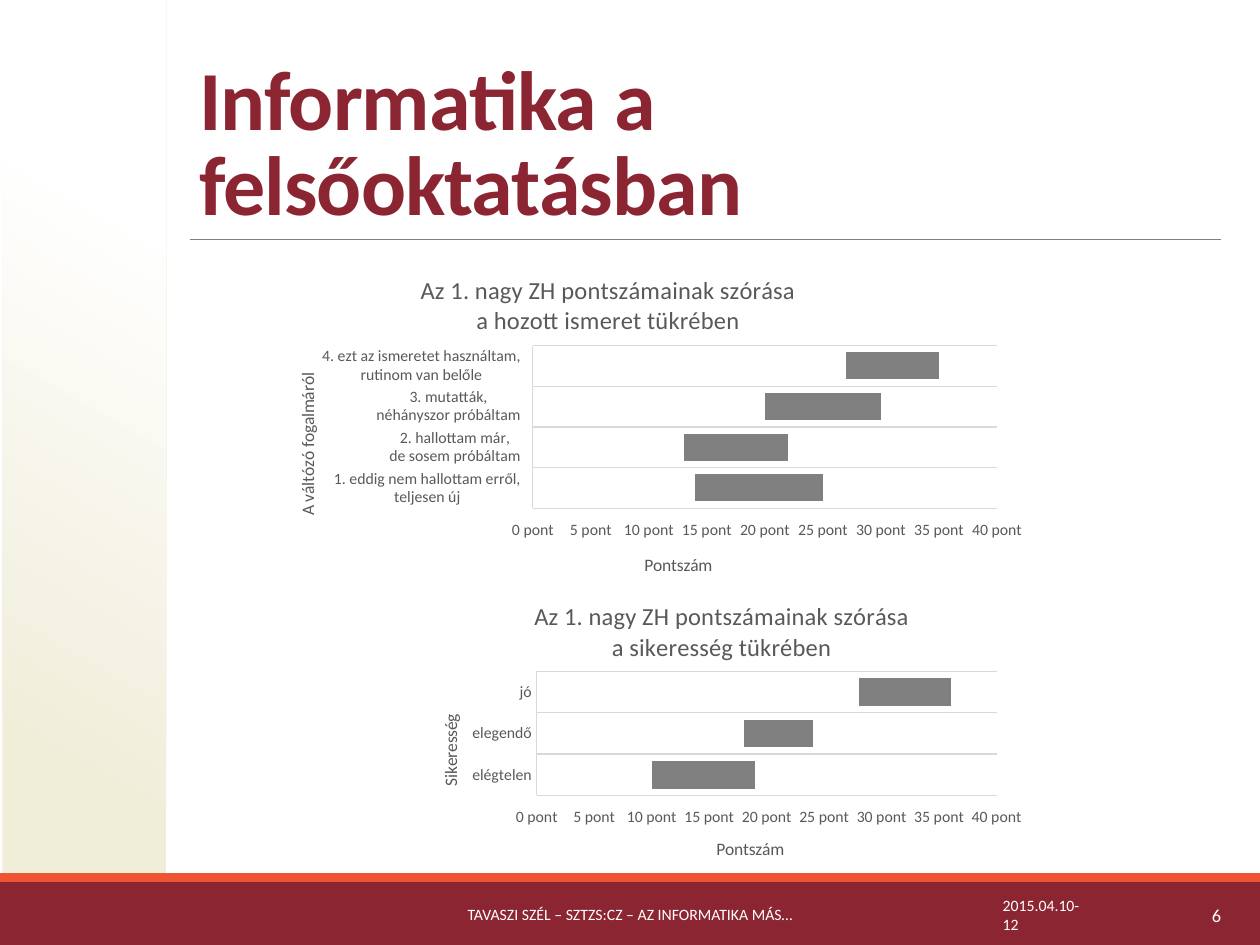
"""Slide with two floating-bar charts of test scores."""
from lxml import etree
from pptx import Presentation, chart as _chart
from pptx import util as u
from pptx.chart import data
from pptx.dml import color
from pptx.enum import chart as charts, shapes, text
from pptx.oxml import ns

RED, ORANGE, CREAM, WHITE = "8C2532", "EE5533", "F0EDD9", "FFFFFF"
GREY, TEXT_GREY, GRID_GREY = "808080", "595959", "D9D9D9"


def rgb(value):
    """Turn a hex string into a colour."""
    return color.RGBColor.from_string(value)


class ScoreSlide:
    """Hold the style and the current slide, on a grid of 100 columns by 75 rows."""

    font = "Calibri"

    def __init__(self, presentation):
        """Add a slide that has a title placeholder."""
        self.column = presentation.slide_width / 100
        self.row = presentation.slide_height / 75
        self.slide = presentation.slides.add_slide(presentation.slide_layouts[5])

    def place(self, left, top, width, height):
        """Convert grid columns and rows into lengths."""
        return (u.Emu(round(left * self.column)), u.Emu(round(top * self.row)),
                u.Emu(round(width * self.column)), u.Emu(round(height * self.row)))

    def style(self, font, size, fill, bold=False):
        """Set name, size, colour and weight of a font."""
        font.name, font.size, font.bold = self.font, u.Pt(size), bold
        font.color.rgb = rgb(fill)

    def rectangle(self, box, fill):
        """Add a rectangle without outline."""
        shape = self.slide.shapes.add_shape(shapes.MSO_SHAPE.RECTANGLE, *self.place(*box))
        shape.shadow.inherit = False
        shape.line.fill.background()
        shape.fill.solid()
        shape.fill.fore_color.rgb = rgb(fill)
        return shape

    def gradient(self, box, stops, angle):
        """Add a rectangle with a linear gradient."""
        fill = self.rectangle(box, WHITE).fill
        fill.gradient()
        fill.gradient_angle = angle
        for stop, (position, value) in zip(fill.gradient_stops, stops):
            stop.position = position
            stop.color.rgb = rgb(value)

    def rule(self, left, right, top):
        """Add a thin horizontal line."""
        start, height, end, _ = self.place(left, top, right, 0)
        line = self.slide.shapes.add_connector(
            shapes.MSO_CONNECTOR.STRAIGHT, start, height, end, height)
        line.line.color.rgb = rgb(GREY)
        line.line.width = u.Pt(0.5)
        etree.SubElement(line._element.spPr, ns.qn("a:effectLst"))

    def title(self, box, words):
        """Move and format the title placeholder."""
        shape = self.slide.shapes.title
        shape.left, shape.top, shape.width, shape.height = self.place(*box)
        frame = shape.text_frame
        frame.text = words
        frame.word_wrap = True
        frame.auto_size = text.MSO_AUTO_SIZE.NONE
        frame.vertical_anchor = text.MSO_ANCHOR.BOTTOM
        frame.margin_right = u.Inches(0.2)
        paragraph = frame.paragraphs[0]
        paragraph.alignment = text.PP_ALIGN.LEFT
        paragraph.line_spacing = 0.85
        run = paragraph.runs[0]
        self.style(run.font, 48, RED, bold=True)
        run.font._element.set("spc", "-50")

    def footer(self, box, words, size, alignment):
        """Add white text to the bottom band."""
        frame = self.slide.shapes.add_textbox(*self.place(*box)).text_frame
        frame.word_wrap = True
        frame.vertical_anchor = text.MSO_ANCHOR.MIDDLE
        frame.text = words
        frame.paragraphs[0].alignment = alignment
        self.style(frame.paragraphs[0].runs[0].font, size, WHITE)

    def layout(self, **shares):
        """Build a manual chart layout from shares of the chart's size."""
        layout = etree.Element(ns.qn("c:layout"))
        manual = etree.SubElement(layout, ns.qn("c:manualLayout"))
        if "w" in shares:
            etree.SubElement(manual, ns.qn("c:layoutTarget"), val="inner")
        for key in ("x", "y"):
            etree.SubElement(manual, ns.qn(f"c:{key}Mode"), val="edge")
        for key, share in shares.items():
            etree.SubElement(manual, ns.qn(f"c:{key}"), val=str(share))
        return layout

    def caption(self, title, words, size, corner, rotation=0):
        """Write, format and place a chart or axis title."""
        frame = title.text_frame
        frame.text = words
        for paragraph in frame.paragraphs:
            self.style(paragraph.font, size, TEXT_GREY)
            self.style(paragraph.runs[0].font, size, TEXT_GREY)
        element = title._element
        element.find(".//" + ns.qn("a:bodyPr")).set("rot", str(rotation * 60000))
        for old in element.findall(ns.qn("c:layout")):
            element.remove(old)
        left, top = corner
        element.find(ns.qn("c:overlay")).addprevious(self.layout(x=left, y=top))

    def range_chart(self, box, title, axis_name, ranges, plot_box, corners, low=False):
        """Add a bar chart whose white bars hide the start of the grey ones."""
        chart_data = data.CategoryChartData()
        chart_data.categories = [name for name, _, _ in ranges]
        chart_data.add_series("Series 1", [high for _, _, high in ranges])
        chart_data.add_series("Series 2", [start for _, start, _ in ranges])
        chart = self.slide.shapes.add_chart(
            charts.XL_CHART_TYPE.BAR_CLUSTERED, *self.place(*box), chart_data).chart
        self.style(chart.font, 10, "000000")
        chart.has_legend = False
        plot = chart.plots[0]
        plot.vary_by_categories = False
        plot.gap_width, plot.overlap = 50, 100
        for series, fill in zip(plot.series, (GREY, WHITE)):
            series.invert_if_negative = False
            series.format.fill.solid()
            series.format.fill.fore_color.rgb = rgb(fill)

        names, scores = chart.category_axis, chart.value_axis
        for axis in (names, scores):
            axis.major_tick_mark = axis.minor_tick_mark = charts.XL_TICK_MARK.NONE
            axis.tick_label_position = charts.XL_TICK_LABEL_POSITION.LOW
            self.style(axis.tick_labels.font, 9, TEXT_GREY)
        if not low:
            names.tick_label_position = charts.XL_TICK_LABEL_POSITION.NEXT_TO_AXIS
        names.has_major_gridlines = True
        for line in (names.format.line, names.major_gridlines.format.line):
            line.color.rgb = rgb(GRID_GREY)
            line.width = u.Pt(0.75)
        scores.has_major_gridlines = False
        scores.format.line.fill.background()
        scores.minimum_scale, scores.maximum_scale, scores.major_unit = 0, 40, 5
        scores.tick_labels.number_format = '0" pont"'
        scores.tick_labels.number_format_is_linked = False

        title_corner, names_corner, scores_corner = corners
        self.caption(chart.chart_title, title, 14, title_corner)
        self.caption(names.axis_title, axis_name, 10, names_corner, rotation=-90)
        self.caption(scores.axis_title, "Pontszám", 10, scores_corner)
        area = chart._chartSpace.find(".//" + ns.qn("c:plotArea"))
        for old in area.findall(ns.qn("c:layout")):
            area.remove(old)
        area.insert(0, self.layout(**dict(zip("xywh", plot_box))))


def main():
    """Build and save the slide."""
    presentation = Presentation()
    presentation.slide_width, presentation.slide_height = u.Inches(10), u.Inches(7.5)
    page = ScoreSlide(presentation)
    page.rectangle((0, 70, 100, 5), RED)
    page.gradient((0.2, 0, 13, 70), ((0.14, CREAM), (0.77, WHITE)), 60)
    page.rectangle((0, 69.3, 100, 0.7), ORANGE)
    page.rule(15.1, 96.9, 19)
    page.title((14.8, 3.1, 82.5, 15.9), "Informatika a felsőoktatásban")
    page.range_chart(
        (32.1, 46.1, 50, 24), "Az 1. nagy ZH pontszámainak szórása\na sikeresség tükrében",
        "Sikeresség", (("elégtelen", 10, 19), ("elegendő", 18, 24), ("jó", 28, 36)),
        (0.21, 0.3, 0.73, 0.41), ((0.2, 0.05), (0.05, 0.43), (0.49, 0.84)))
    page.range_chart(
        (20.8, 20, 61.4, 27.5), "Az 1. nagy ZH pontszámainak szórása\na hozott ismeret tükrében",
        "A váltózó fogalmáról",
        (("1. eddig nem hallottam erről,\nteljesen új", 14, 25),
         ("2. hallottam már,\nde sosem próbáltam", 13, 22),
         ("3. mutatták,\nnéhányszor próbáltam", 20, 30),
         ("4. ezt az ismeretet használtam,\nrutinom van belőle", 27, 35)),
        (0.35, 0.27, 0.6, 0.47), ((0.2, 0.05), (0.04, 0.34), (0.49, 0.86)), low=True)
    page.footer((78.6, 70.6, 9.3, 4), "2015.04.10-12", 9, text.PP_ALIGN.LEFT)
    page.footer((30.2, 70.6, 39.6, 4), "TAVASZI SZÉL – SZTZS:CZ – AZ INFORMATIKA MÁS…",
                9, text.PP_ALIGN.CENTER)
    page.footer((89.2, 70.6, 8.7, 4), "6", 10.5, text.PP_ALIGN.RIGHT)
    presentation.save("out.pptx")


if __name__ == "__main__":
    main()
